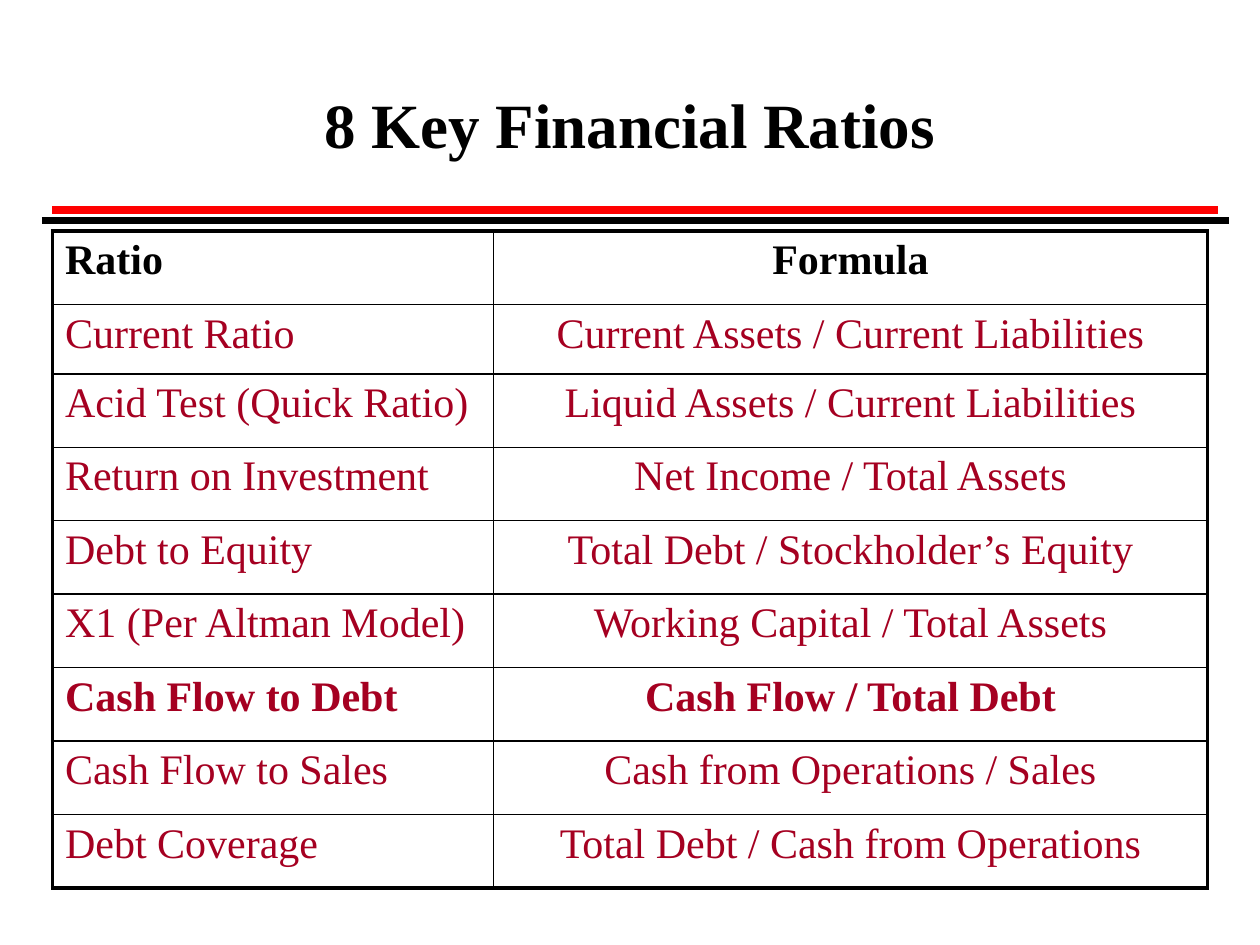
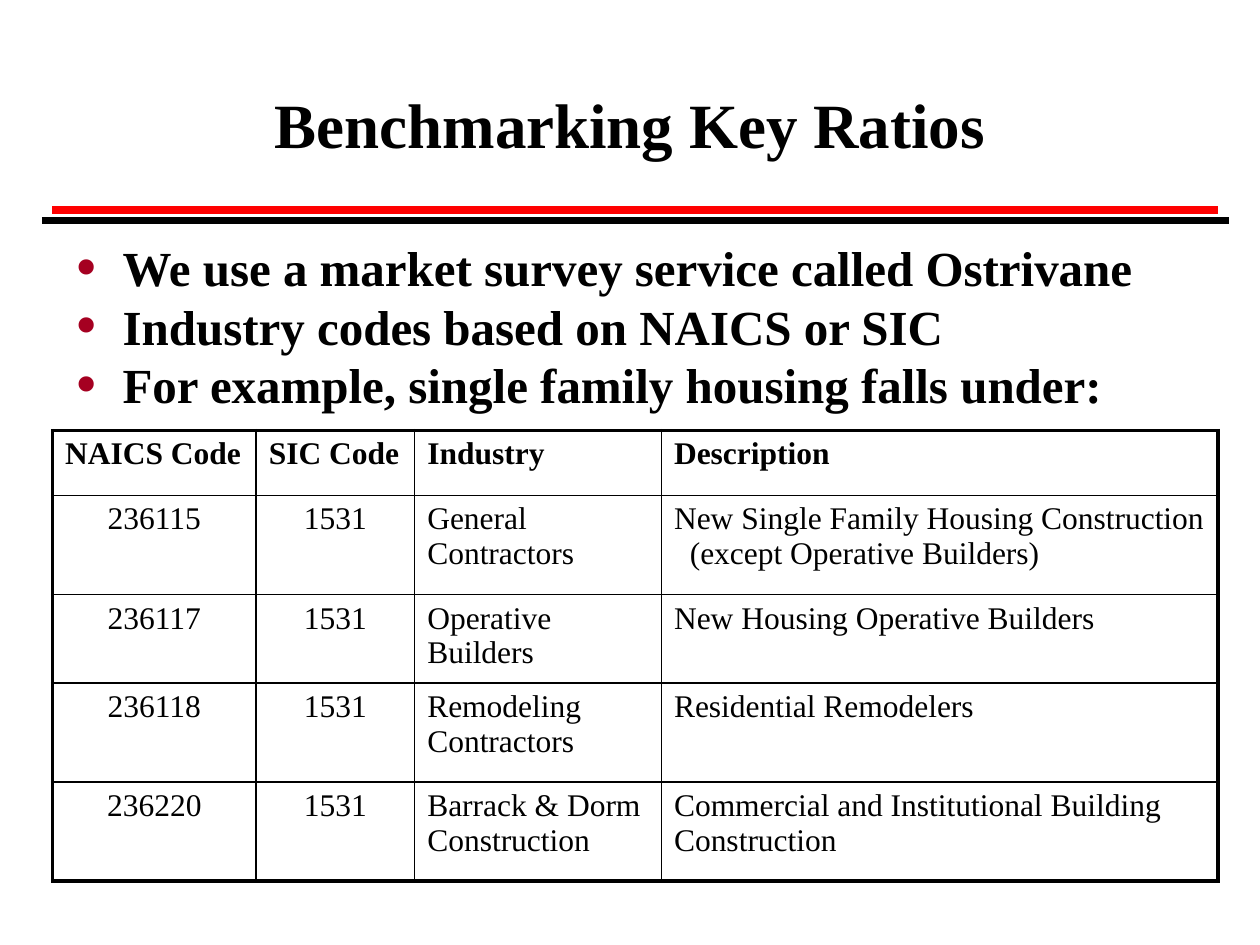
from dataclasses import dataclass

from lxml.etree import SubElement
from pptx import Presentation
from pptx.dml.color import RGBColor as RGB
from pptx.enum.shapes import MSO_CONNECTOR as CONN
from pptx.enum.text import MSO_ANCHOR as ANCHOR, PP_ALIGN as ALIGN
from pptx.oxml import parse_xml
from pptx.oxml.ns import nsdecls, qn
from pptx.util import Pt


@dataclass(frozen=True)
class Theme:
    font: str = "Times New Roman"
    black: str = "000000"
    red: str = "FF0000"
    crimson: str = "A50021"
    title: int = 36
    bullet: int = 28
    ratio: int = 24
    code: int = 18
    rule: float = 4.5
    outer: float = 2.25
    inner: float = 1


T = Theme()


def style(p, size, color=T.black, bold=False, align=ALIGN.LEFT):
    p.alignment = align
    for r in p.runs:
        r.font.name, r.font.size, r.font.bold = T.font, Pt(size), bold
        r.font.color.rgb = RGB.from_string(color)


def add_grid(s, top, widths, heights, rows):
    """Add an unfilled table with a heavy frame and thin inner lines."""
    table = s.shapes.add_table(len(rows), len(widths), Pt(30), Pt(top),
                               Pt(sum(widths)), Pt(sum(heights))).table
    table.first_row = table.horz_banding = False
    for col, width in zip(table.columns, widths):
        col.width = Pt(width)
    for row, height in zip(table.rows, heights):
        row.height = Pt(height)
    for i, texts in enumerate(rows):
        for j, text in enumerate(texts):
            cell = table.cell(i, j)
            cell.text = text
            on_frame = {"L": j == 0, "R": j == len(widths) - 1,
                        "T": i == 0, "B": i == len(rows) - 1}
            tcPr = cell._tc.get_or_add_tcPr()
            for side, heavy in on_frame.items():
                width = Pt(T.outer if heavy else T.inner)
                tcPr.append(parse_xml(
                    f'<a:ln{side} {nsdecls("a")} w="{width}"><a:solidFill>'
                    f'<a:srgbClr val="{T.black}"/></a:solidFill></a:ln{side}>'))
            cell.fill.background()
    return table


prs = Presentation()
prs.slide_width, prs.slide_height = Pt(720), Pt(540)

# Shared title and double rule
slides = []
for title in ("8 Key Financial Ratios", "Benchmarking Key Ratios"):
    s = prs.slides.add_slide(prs.slide_layouts[6])
    slides.append(s)
    tf = s.shapes.add_textbox(Pt(54), Pt(30), Pt(612), Pt(90)).text_frame
    tf.word_wrap = True
    tf.vertical_anchor = ANCHOR.MIDDLE
    tf.text = title
    tf.paragraphs[0].line_spacing = 0.75
    style(tf.paragraphs[0], T.title, bold=True, align=ALIGN.CENTER)
    for color, left, right, y in ((T.black, 24, 702, 126), (T.red, 30, 696, 120)):
        rule = s.shapes.add_connector(CONN.STRAIGHT, Pt(left), Pt(y), Pt(right), Pt(y))
        rule.line.width = Pt(T.rule)
        rule.line.color.rgb = RGB.from_string(color)
        SubElement(rule._element.spPr, qn("a:effectLst"))
ratio_slide, benchmark_slide = slides

# Ratios and their formulas
ratios = [
    ("Ratio", "Formula"),
    ("Current Ratio", "Current Assets / Current Liabilities"),
    ("Acid Test (Quick Ratio)", "Liquid Assets / Current Liabilities"),
    ("Return on Investment", "Net Income / Total Assets"),
    ("Debt to Equity", "Total Debt / Stockholder’s Equity"),
    ("X1 (Per Altman Model)", "Working Capital / Total Assets"),
    ("Cash Flow to Debt", "Cash Flow / Total Debt"),
    ("Cash Flow to Sales", "Cash from Operations / Sales"),
    ("Debt Coverage", "Total Debt / Cash from Operations"),
]
table = add_grid(ratio_slide, 132, (252, 408), [42, 39.6] + [42] * 7, ratios)
for i, (name, _) in enumerate(ratios):
    for j, align in enumerate((ALIGN.LEFT, ALIGN.CENTER)):
        style(table.cell(i, j).text_frame.paragraphs[0], T.ratio,
              T.crimson if i else T.black,
              bold=name in ("Ratio", "Cash Flow to Debt"), align=align)

# Benchmarking points
tf = benchmark_slide.shapes.add_textbox(Pt(36), Pt(132), Pt(642), Pt(108)).text_frame
tf.word_wrap = True
tf.text = "\n".join((
    "We use a market survey service called Ostrivane",
    "Industry codes based on NAICS or SIC",
    "For example, single family housing falls under:",
))
for p in tf.paragraphs:
    pPr = p._p.get_or_add_pPr()
    pPr.set("marL", str(Pt(27)))
    pPr.set("indent", str(-Pt(27)))
    SubElement(SubElement(pPr, qn("a:buClr")), qn("a:srgbClr"), val=T.crimson)
    SubElement(pPr, qn("a:buSzPct"), val="130000")
    SubElement(pPr, qn("a:buFont"), typeface=T.font)
    SubElement(pPr, qn("a:buChar"), char="•")
    style(p, T.bullet, bold=True)

# Industry codes
industries = [
    ("NAICS Code", "SIC Code", "Industry", "Description"),
    ("236115", "1531", "General Contractors",
     "New Single Family Housing Construction (except Operative Builders)"),
    ("236117", "1531", "Operative Builders", "New Housing Operative Builders"),
    ("236118", "1531", "Remodeling Contractors", "Residential Remodelers"),
    ("236220", "1531", "Barrack & Dorm Construction",
     "Commercial and Institutional Building Construction"),
]
table = add_grid(benchmark_slide, 246, (116.4, 90.6, 141, 318),
                 (37.2, 56.6, 38.4, 56.6, 56.6), industries)
for i in range(len(industries)):
    for j in range(4):
        centred = i > 0 and j < 2
        style(table.cell(i, j).text_frame.paragraphs[0], T.code, bold=i == 0,
              align=ALIGN.CENTER if centred else ALIGN.LEFT)
# The wrapped line of the first description hangs in slightly
pPr = table.cell(1, 3).text_frame.paragraphs[0]._p.get_or_add_pPr()
pPr.set("marL", str(Pt(9)))
pPr.set("indent", str(-Pt(9)))

prs.save("out.pptx")
